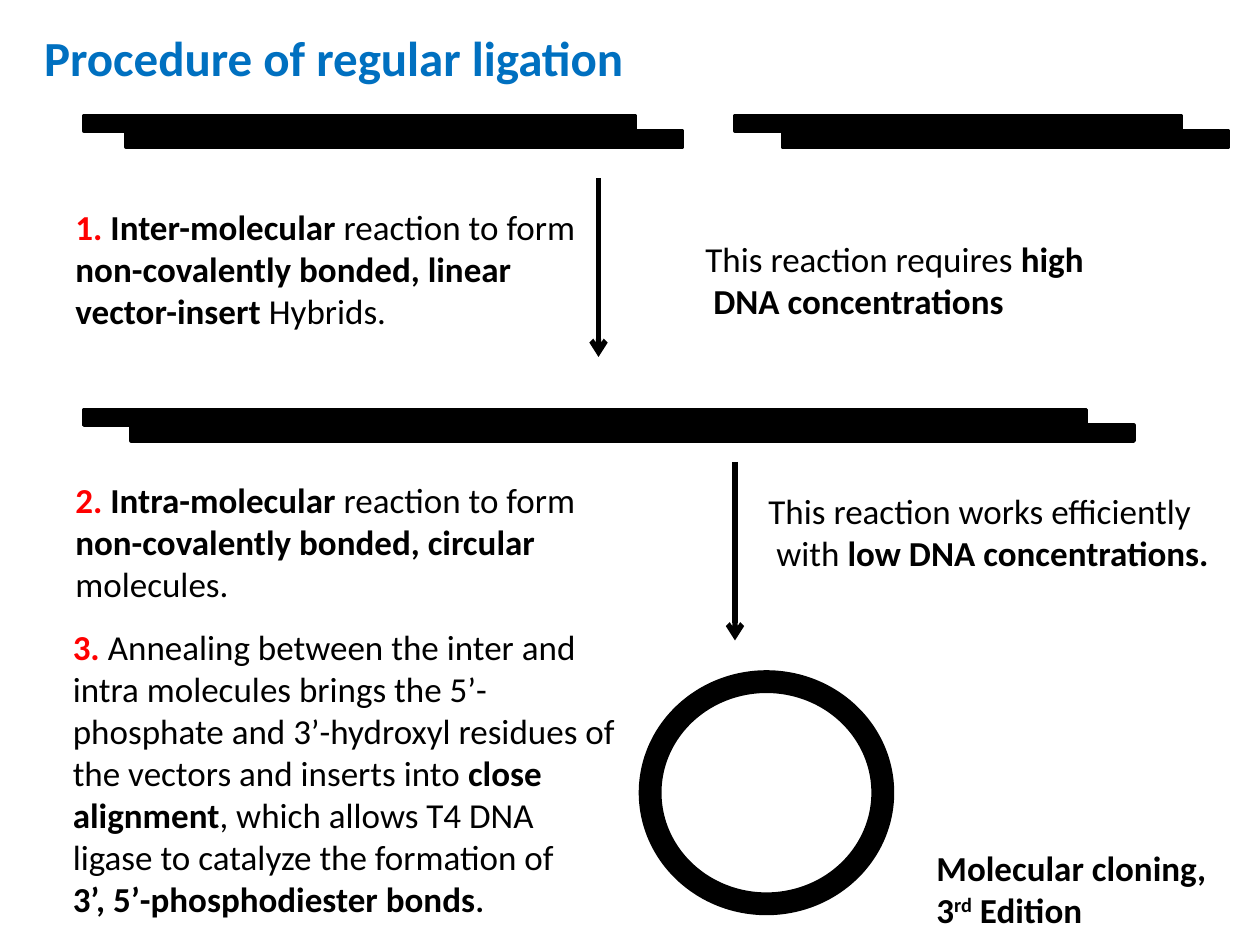
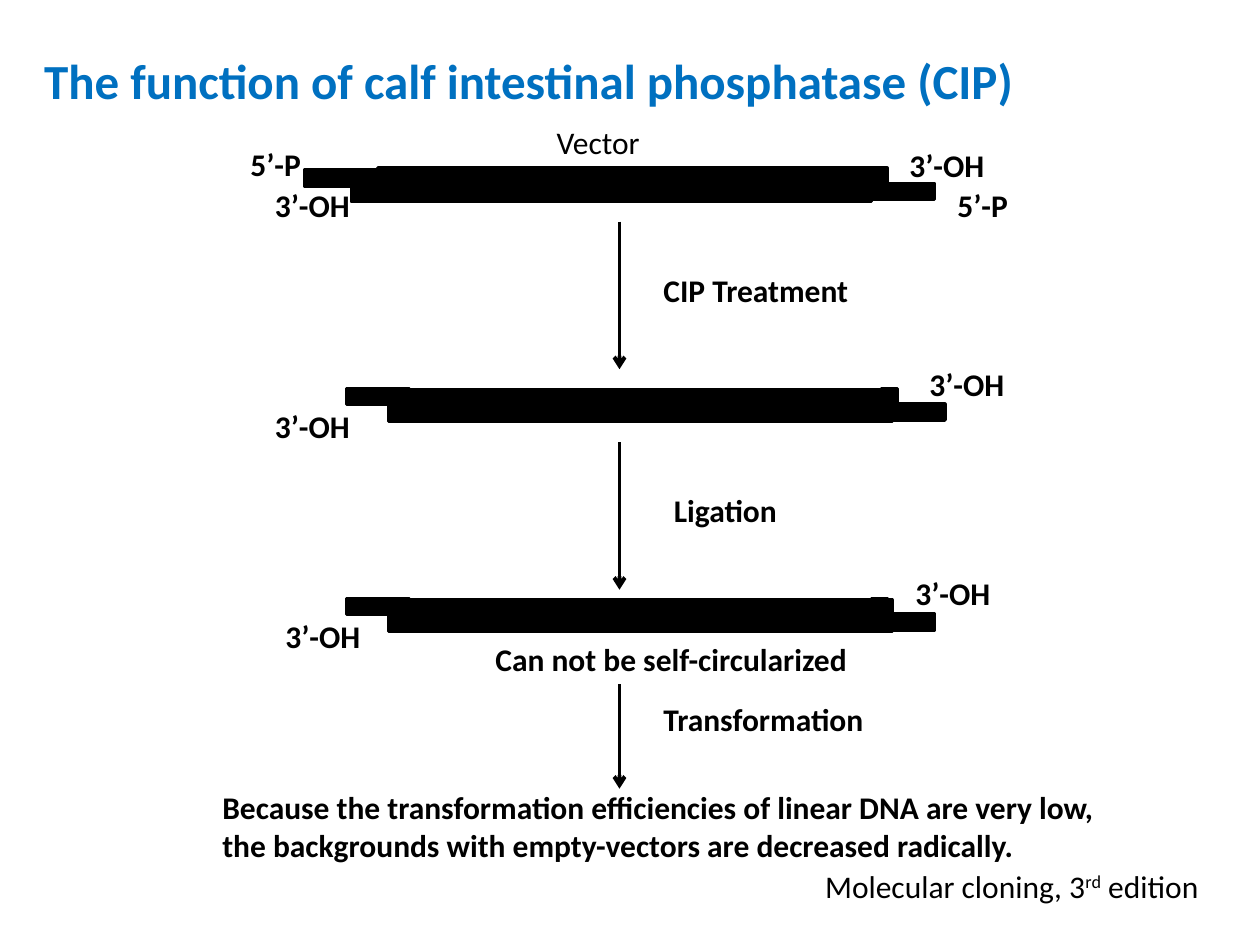
"""Build two slides on regular ligation and the function of calf intestinal phosphatase."""
from dataclasses import dataclass
from typing import Any, NamedTuple

from pptx import Presentation
from pptx.dml.color import RGBColor
from pptx.enum.shapes import MSO_CONNECTOR, MSO_SHAPE
from pptx.enum.text import MSO_ANCHOR, MSO_AUTO_SIZE, PP_ALIGN
from pptx.oxml.ns import qn
from pptx.oxml.xmlchemy import OxmlElement
from pptx.util import Pt

BAR = MSO_SHAPE.RECTANGLE
CORNER = MSO_SHAPE.CORNER
DONUT = MSO_SHAPE.DONUT
STRAIGHT = MSO_CONNECTOR.STRAIGHT
TOP = MSO_ANCHOR.TOP
LEFT = PP_ALIGN.LEFT
NO_FIT = MSO_AUTO_SIZE.NONE
TITLE_ONLY = 5


@dataclass(frozen=True)
class Theme:
    """Hold the colours, font and sizes of the deck."""
    ink: RGBColor = RGBColor(0, 0, 0)
    title: RGBColor = RGBColor(0x00, 0x70, 0xC0)
    number: RGBColor = RGBColor(0xFF, 0, 0)
    font: str = "Calibri"
    title_size: float = 28
    body_size: float = 20
    label_size: float = 18
    outline: float = 2
    bar_height: float = 18
    corner_width: float = 36
    label_height: float = 28.8


THEME = Theme()


class Span(NamedTuple):
    """Describe a piece of text in one format."""
    text: str
    bold: bool = False
    color: RGBColor = THEME.ink
    raised: bool = False
    size: float = 0


class Label(NamedTuple):
    """Describe a text box and its paragraphs of spans."""
    left: float
    top: float
    width: float
    height: float
    paragraphs: list[list[Span]]
    size: float = THEME.body_size
    wrap: bool = False


class Strand(NamedTuple):
    """Describe a double strand: a bar between two sticky ends."""
    left_end: float
    bar_left: float
    bar_width: float
    right_end: float
    top: float
    bar_drop: float = 0
    right_drop: float = 0


class Arrow(NamedTuple):
    """Describe a downward arrow."""
    x: float
    top: float
    bottom: float
    width: float = 2.25


def bold(text: str) -> Span:
    """Return a bold span."""
    return Span(text, True)


def number(text: str) -> Span:
    """Return a bold red step number."""
    return Span(text, True, THEME.number)


def tag(left: float, top: float, width: float, text: str, heavy: bool = True) -> Label:
    """Return a one-line label of the small size."""
    return Label(left, top, width, THEME.label_height, [[Span(text, heavy)]], THEME.label_size)


def apply(target: Any, formats: dict[str, Any]) -> None:
    """Set each format value on the target."""
    for name, value in formats.items():
        setattr(target, name, value)


def write(para: Any, span: Span, size: float) -> None:
    """Add a formatted span to a paragraph."""
    run = para.add_run()
    run.text = span.text
    apply(run.font, {"name": THEME.font, "size": Pt(span.size or size), "bold": span.bold})
    run.font.color.rgb = span.color
    if span.raised:
        run._r.get_or_add_rPr().set("baseline", "30000")


def add_page(deck: Any, title: str, top: float) -> Any:
    """Add a slide with its title."""
    page = deck.slides.add_slide(deck.slide_layouts[TITLE_ONLY])
    box = page.shapes.title
    apply(box, {"left": Pt(18), "top": Pt(top), "width": Pt(684), "height": Pt(48)})
    apply(box.text_frame, {"vertical_anchor": TOP, "auto_size": NO_FIT, "word_wrap": True})
    para = box.text_frame.paragraphs[0]
    para.alignment = LEFT
    write(para, Span(title, True, THEME.title), THEME.title_size)
    return page


def add_solid(page: Any, kind: Any, left: float, top: float, width: float, height: float) -> Any:
    """Draw a black shape."""
    shape = page.shapes.add_shape(kind, Pt(left), Pt(top), Pt(width), Pt(height))
    shape.shadow.inherit = False
    shape.fill.solid()
    shape.fill.fore_color.rgb = THEME.ink
    shape.line.color.rgb = THEME.ink
    shape.line.width = Pt(THEME.outline)
    return shape


def add_bar(page: Any, left: float, top: float, width: float) -> None:
    """Draw the bar of a strand."""
    add_solid(page, BAR, left, top, width, THEME.bar_height)


def add_strand(page: Any, strand: Strand) -> None:
    """Draw a strand with its two sticky ends."""
    end_size = (THEME.corner_width, THEME.bar_height)
    add_bar(page, strand.bar_left, strand.top + strand.bar_drop, strand.bar_width)
    add_solid(page, CORNER, strand.left_end, strand.top, *end_size).rotation = 180
    add_solid(page, CORNER, strand.right_end, strand.top + strand.right_drop, *end_size)


def add_arrow(page: Any, arrow: Arrow) -> None:
    """Draw a downward arrow with an open head."""
    x = Pt(arrow.x)
    line = page.shapes.add_connector(STRAIGHT, x, Pt(arrow.top), x, Pt(arrow.bottom))
    line.line.color.rgb = THEME.ink
    line.line.width = Pt(arrow.width)
    properties = line._element.spPr
    head = OxmlElement("a:tailEnd")
    head.set("type", "arrow")
    properties.find(qn("a:ln")).append(head)
    properties.append(OxmlElement("a:effectLst"))


def add_label(page: Any, label: Label) -> None:
    """Draw a text box."""
    box = page.shapes.add_textbox(Pt(label.left), Pt(label.top), Pt(label.width), Pt(label.height))
    frame = box.text_frame
    apply(frame, {"word_wrap": label.wrap, "vertical_anchor": TOP})
    for index, spans in enumerate(label.paragraphs):
        para = frame.add_paragraph() if index else frame.paragraphs[0]
        for span in spans:
            write(para, span, label.size)


def draw(page: Any, strands: list[Strand], arrows: list[Arrow], labels: list[Label]) -> None:
    """Draw all strands, arrows and labels of a page."""
    for strand in strands:
        add_strand(page, strand)
    for arrow in arrows:
        add_arrow(page, arrow)
    for label in labels:
        add_label(page, label)


def build_ligation(deck: Any) -> None:
    """Build the slide on regular ligation."""
    page = add_page(deck, "Procedure of regular ligation", 12.24)
    strands = [
        Strand(48, 72, 288, 354, 66),
        Strand(420, 450, 222, 666, 66),
        Strand(48, 78, 288, 360, 234),
        Strand(366, 396, 222, 612, 234),
    ]
    arrows = [Arrow(342, 102, 204, 3), Arrow(420, 264, 366, 3)]
    labels = [
        Label(36, 114, 303, 80, [
            [number("1."), bold(" Inter-molecular"), Span(" reaction to form")],
            [bold("non-covalently bonded, linear")],
            [bold("vector-insert "), Span("Hybrids.")],
        ]),
        Label(36, 270, 307.5, 80, [
            [number("2."), bold(" Intra-molecular"), Span(" reaction to form")],
            [bold("non-covalently bonded, circular")],
            [Span("molecules.")],
        ]),
        Label(34.5, 354, 325.5, 177, [
            [number("3. "),
             Span("Annealing between the inter and intra molecules brings the 5’-phosphate "
                  "and 3’-hydroxyl residues of the vectors and inserts into "),
             bold("close alignment"),
             Span(", which allows T4 DNA ligase to catalyze the formation of")],
            [bold("3’, 5’-phosphodiester bonds"), Span(".", True, size=THEME.label_size)],
        ], wrap=True),
        Label(396, 132, 234, 55.5, [
            [Span("This reaction requires "), bold("high")],
            [bold(" DNA concentrations")],
        ]),
        Label(432, 276, 267, 55.5, [
            [Span("This reaction works efficiently")],
            [Span(" with "), bold("low DNA concentrations.")],
        ]),
        Label(528, 480, 173, 55.5, [
            [bold("Molecular cloning,")],
            [bold("3"), Span("rd", True, raised=True), bold(" Edition")],
        ]),
    ]
    draw(page, strands, arrows, labels)
    add_solid(page, DONUT, 366, 384, 144, 138).adjustments[0] = 0.08


def build_phosphatase(deck: Any) -> None:
    """Build the slide on calf intestinal phosphatase."""
    page = add_page(deck, "The function of calf intestinal phosphatase (CIP)", 25.2)
    strands = [
        Strand(174, 210, 288, 498, 97.2, right_drop=-1.2),
        Strand(198, 222, 288, 504, 222, bar_drop=1),
        Strand(198, 222, 288, 498, 342, bar_drop=1),
    ]
    arrows = [Arrow(354, 126.7, 211), Arrow(354, 252.7, 337), Arrow(354, 391, 450.7)]
    hydroxyls = [(150, 103), (512.6, 80), (150, 229), (524, 205.2), (516, 324.7), (156, 349.2)]
    phosphates = [(136, 79.2), (540, 103)]
    labels = [
        *(tag(left, top, 57.6, "3’-OH") for left, top in hydroxyls),
        *(tag(left, top, 44, "5’-P") for left, top in phosphates),
        tag(311, 67, 67, "Vector", False),
        tag(372, 151.2, 121, "CIP Treatment"),
        tag(378, 277.2, 78, "Ligation"),
        tag(276, 362.2, 217.4, "Can not be self-circularized"),
        tag(372, 396.7, 134, "Transformation"),
        Label(120, 447, 546, 51, [
            [bold("Because the transformation efficiencies of linear DNA are very low,")],
            [bold("the backgrounds with empty-vectors are decreased radically.")],
        ], THEME.label_size),
        Label(464.4, 491.8, 231.8, THEME.label_height, [
            [Span("Molecular cloning, 3"), Span("rd", raised=True), Span(" edition")],
        ], THEME.label_size),
    ]
    add_bar(page, 216, 96, 288)
    draw(page, strands, arrows, labels)


def main() -> None:
    """Build and save the deck."""
    deck = Presentation()
    apply(deck, {"slide_width": Pt(720), "slide_height": Pt(540)})
    build_ligation(deck)
    build_phosphatase(deck)
    deck.save("out.pptx")


if __name__ == "__main__":
    main()
